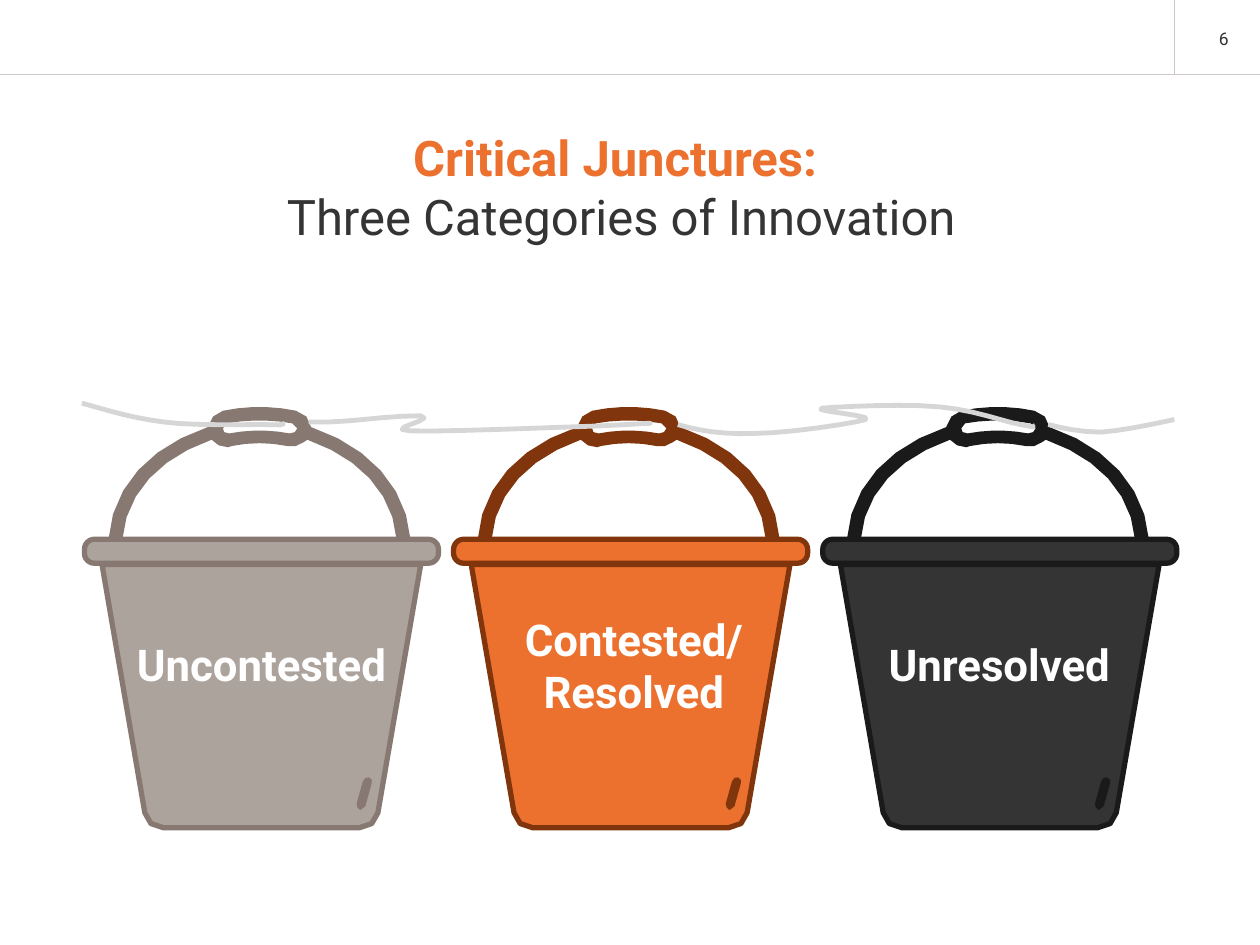
from math import ceil, dist

from lxml.etree import SubElement
from pptx import Presentation
from pptx.dml.color import RGBColor
from pptx.enum.shapes import MSO_CONNECTOR, MSO_SHAPE
from pptx.enum.text import MSO_ANCHOR, PP_ALIGN
from pptx.oxml.ns import qn
from pptx.util import Inches, Pt

WHITE = RGBColor(0xFF, 0xFF, 0xFF)
CHARCOAL = RGBColor(0x35, 0x34, 0x35)
BLACK = RGBColor(0x1A, 0x1A, 0x1A)
ORANGE = RGBColor(0xEC, 0x71, 0x2E)
RUST = RGBColor(0x81, 0x35, 0x0C)
TAUPE = RGBColor(0xAD, 0xA3, 0x9D)
BROWN = RGBColor(0x87, 0x79, 0x71)
RULE_GRAY = RGBColor(0xCE, 0xC8, 0xC4)
STRING_GRAY = RGBColor(0xD7, 0xD6, 0xD7)
FONT = "Roboto"

# The page is a grid of 1000 columns by 750 rows
CELL = Inches(0.01)
COLUMNS, ROWS = 1000, 750
BUCKET_PITCH = 293

deck = Presentation()
deck.slide_width, deck.slide_height = COLUMNS * CELL, ROWS * CELL
page = deck.slides.add_slide(deck.slide_layouts[6])


def add_outline(contours, shift=0, fill=None, line=None, width=0):
    """Each contour is a start point, then lines (2 numbers) or Bezier curves (6)."""
    builder = None
    for start, *segments in contours:
        points = [start]
        for segment in segments:
            if len(segment) == 2:
                points.append(segment)
                continue
            corners = [points[-1], segment[:2], segment[2:4], segment[4:]]
            length = sum(dist(a, b) for a, b in zip(corners, corners[1:]))
            steps = max(2, min(6, ceil(length / 12)))  # longer curves get more points
            for step in range(1, steps + 1):
                t = step / steps
                weights = ((1 - t) ** 3, 3 * t * (1 - t) ** 2, 3 * t * t * (1 - t), t ** 3)
                points.append(tuple(sum(w * corner[axis] for w, corner in zip(weights, corners))
                                    for axis in (0, 1)))
        points = [((x + shift) * CELL, y * CELL) for x, y in points]
        if builder is None:
            builder = page.shapes.build_freeform(*points[0])
        else:
            builder.move_to(*points[0])
        builder.add_line_segments(points[1:], close=fill is not None)
    outline = builder.convert_to_shape()
    outline.shadow.inherit = False
    if fill is None:
        outline.fill.background()
    else:
        outline.fill.solid()
        outline.fill.fore_color.rgb = fill
    if line is None:
        outline.line.fill.background()
    else:
        outline.line.color.rgb = line
        outline.line.width = Pt(width)


def add_text(lines, left, top, width, height, size, color, bold=False, align=PP_ALIGN.CENTER):
    box = page.shapes.add_textbox(left * CELL, top * CELL, width * CELL, height * CELL)
    frame = box.text_frame
    frame.word_wrap = True
    frame.vertical_anchor = MSO_ANCHOR.MIDDLE
    frame.text = lines
    for para in frame.paragraphs:
        para.alignment = align
        for span in para.runs:
            span.font.name, span.font.size, span.font.bold = FONT, Pt(size), bold
            span.font.color.rgb = color
    return frame


# Header rules and page number
for x1, y1, x2, y2 in ((932, 0, 932, 59), (0, 59, COLUMNS, 59)):
    rule = page.shapes.add_connector(MSO_CONNECTOR.STRAIGHT,
                                     x1 * CELL, y1 * CELL, x2 * CELL, y2 * CELL)
    rule.line.color.rgb = RULE_GRAY
    rule.line.width = Pt(0.65)
    SubElement(rule.element.spPr, qn("a:effectLst"))
add_text("6", 937, 17, 48, 27, 10, CHARCOAL, align=PP_ALIGN.RIGHT)

# Title: one paragraph with a line break
title = add_text("Critical Junctures: \vThree Categories of Innovation",
                 67, 100, 852, 96, 28, CHARCOAL)
title.margin_left = title.margin_right = title.margin_top = title.margin_bottom = 0
lead = title.paragraphs[0].runs[0]
lead.font.bold = True
lead.font.color.rgb = ORANGE

# Parts of the first bucket; the others are shifted by the pitch
HANDLE = [
    [(168, 349), (171, 353, 176, 355, 181, 355), (184, 354),
     (199, 351, 213, 351, 228, 354), (233, 355, 237, 354, 241, 351),
     (244, 349), (284, 363, 312, 390, 315, 429), (326, 429),
     (323, 386, 292, 354, 247, 339), (246, 333, 242, 327, 235, 326),
     (216, 322, 196, 322, 177, 326), (171, 327, 166, 333, 165, 339),
     (120, 354, 89, 385, 86, 429), (97, 429), (100, 390, 128, 363, 168, 349)],
    [(180, 336), (197, 333, 215, 333, 232, 336), (236, 340), (234, 343), (230, 344),
     (214, 341, 198, 341, 182, 344), (178, 343), (177, 340)],
]
BODY = [[(300, 645), (299, 652, 293, 657, 285, 657), (130, 657),
         (122, 657, 116, 652, 115, 645), (81, 448), (334, 448)]]
GLINT = [[(286, 643), (290, 640), (295, 622), (296, 620, 295, 618, 293, 617),
          (291, 616, 289, 618, 288, 620), (283, 638), (283, 640, 284, 642, 286, 643)]]

# Buckets: label, label box, fill, edge
buckets = [
    ("Uncontested", (81, 501, 253, 52), TAUPE, BROWN),
    ("Contested/\nResolved", (379, 481, 248, 94), ORANGE, RUST),
    ("Unresolved", (682, 501, 222, 52), CHARCOAL, BLACK),
]
for index, (label, label_area, fill, edge) in enumerate(buckets):
    shift = index * BUCKET_PITCH
    add_outline(HANDLE, shift, fill=edge)
    add_outline(BODY, shift, fill=fill, line=edge, width=3)
    rim = page.shapes.add_shape(MSO_SHAPE.ROUNDED_RECTANGLE, (67 + shift) * CELL, 428 * CELL,
                                281 * CELL, 19 * CELL)
    rim.adjustments[0] = 0.42
    rim.shadow.inherit = False
    rim.fill.solid()
    rim.fill.fore_color.rgb = fill
    rim.line.color.rgb = edge
    rim.line.width = Pt(3)
    add_outline(GLINT, shift, fill=edge)
    add_text(label, *label_area, 25, WHITE, bold=True)

# String threaded through the handles
strings = [
    [(65, 320), (86, 326, 106, 332, 130, 335), (153, 338, 192, 337, 208, 337),
     (224, 338, 225, 337, 226, 336)],
    [(245, 335), (277, 336, 302, 330, 334, 330), (348, 333, 302, 341, 326, 342),
     (350, 343, 446, 339, 478, 338), (516, 336), (513, 336)],
    [(538, 337), (555, 342, 574, 345, 599, 344), (624, 344, 678, 336, 687, 333),
     (696, 330, 642, 326, 652, 324), (662, 323, 719, 320, 746, 323),
     (772, 325, 798, 335, 810, 337), (823, 340, 821, 339, 819, 337)],
    [(832, 337), (844, 340, 857, 343, 874, 343), (891, 342, 923, 335, 932, 333)],
]
for string in strings:
    add_outline([string], line=STRING_GRAY, width=2.75)

deck.save("out.pptx")
